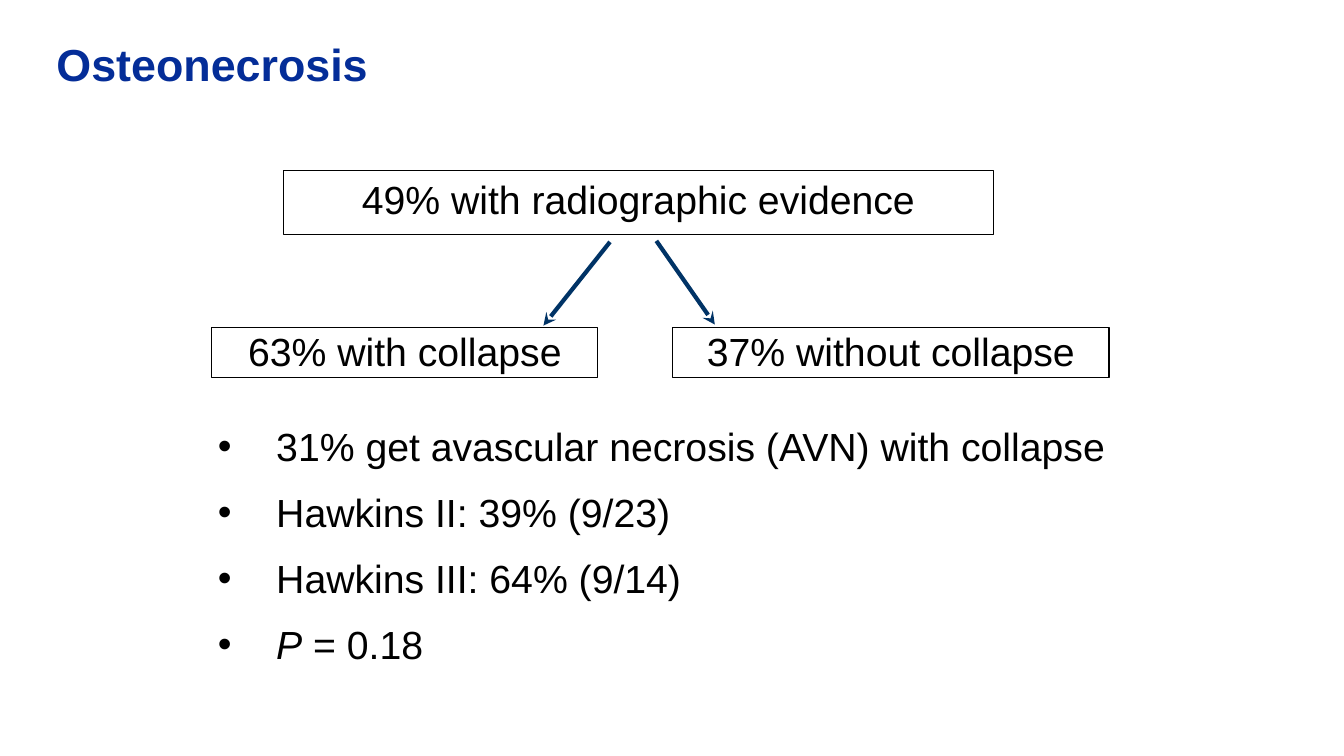
from lxml import etree
from pptx import Presentation
from pptx.dml.color import RGBColor
from pptx.enum import shapes, text
from pptx.oxml.ns import qn
from pptx.util import Inches, Pt

# Content: boxes and arrows in inches
COLORS = {"title": "042D98", "text": "000000", "box": "FFFFFF", "arrow": "003366"}
FONT = "Arial"
TITLE = "Osteonecrosis"
FINDINGS = [  # wording, left, top, width, height, inset
    ("49% with radiographic evidence", 2.81, 1.69, 7.04, 0.64, 0.05),
    ("63% with collapse", 2.1, 3.25, 3.83, 0.5, 0),
    ("37% without collapse", 6.67, 3.25, 4.33, 0.5, 0),
]
ARROWS = [((6.05, 2.4), (5.39, 3.23)), ((6.51, 2.39), (7.09, 3.22))]
RATES = [  # runs of each bullet: wording, italic
    [("31% get avascular necrosis (AVN) with collapse", False)],
    [("Hawkins II: 39% (9/23)", False)],
    [("Hawkins III: 64% (9/14)", False)],
    [("P", True), (" = 0.18", False)],
]
BULLET_INDENT = 0.58


def color(name):
    return RGBColor.from_string(COLORS[name])


def set_frame(shape, inset=0):
    frame = shape.text_frame
    frame.word_wrap = True
    frame.vertical_anchor = text.MSO_ANCHOR.TOP
    frame.margin_left = frame.margin_right = Inches(inset)
    frame.margin_top = frame.margin_bottom = Inches(inset)
    return frame


def add_run(paragraph, wording, size=28, ink="text", bold=False, italic=False):
    run = paragraph.add_run()
    run.text = wording
    run.font.name, run.font.size = FONT, Pt(size)
    run.font.bold, run.font.italic = bold, italic
    run.font.color.rgb = color(ink)


prs = Presentation()
prs.slide_width, prs.slide_height = Inches(13.33), Inches(7.5)
slide = prs.slides.add_slide(prs.slide_layouts[6])

# Title
heading = slide.shapes.add_textbox(*map(Inches, (0.56, 0.42, 12.07, 1)))
heading_line = set_frame(heading).paragraphs[0]
heading_line.line_spacing = 0.9
add_run(heading_line, TITLE, 32, "title", bold=True)

# Boxed findings
for wording, left, top, width, height, inset in FINDINGS:
    finding = slide.shapes.add_shape(
        shapes.MSO_SHAPE.RECTANGLE, *map(Inches, (left, top, width, height)))
    finding.shadow.inherit = False
    finding.fill.background()
    finding.line.color.rgb = color("text")
    finding.line.width = Pt(0.75)
    label = set_frame(finding, inset).paragraphs[0]
    label.alignment = text.PP_ALIGN.CENTER
    add_run(label, wording)

# Bulleted rates
rates = set_frame(slide.shapes.add_textbox(*map(Inches, (2.16, 4.19, 8.99, 2.5))))
for i, runs in enumerate(RATES):
    rate = rates.add_paragraph() if i else rates.paragraphs[0]
    rate.space_before = Pt(7.5 if i else 0)
    rate.space_after = Pt(6)
    props = rate._p.get_or_add_pPr()
    props.set("marL", str(Inches(BULLET_INDENT)))
    props.set("indent", str(-Inches(BULLET_INDENT)))
    etree.SubElement(props, qn("a:buFont"), typeface=FONT)
    etree.SubElement(props, qn("a:buChar"), char="•")
    for wording, italic in runs:
        add_run(rate, wording, italic=italic)

# Arrows from the evidence to its two outcomes
for start, end in ARROWS:
    arrow = slide.shapes.add_connector(
        shapes.MSO_CONNECTOR.STRAIGHT, *map(Inches, start + end))
    arrow.line.color.rgb = color("arrow")
    arrow.line.width = Pt(3)
    etree.SubElement(arrow.line._get_or_add_ln(), qn("a:tailEnd"), type="stealth")
    etree.SubElement(arrow._element.spPr, qn("a:effectLst"))

prs.save("out.pptx")
